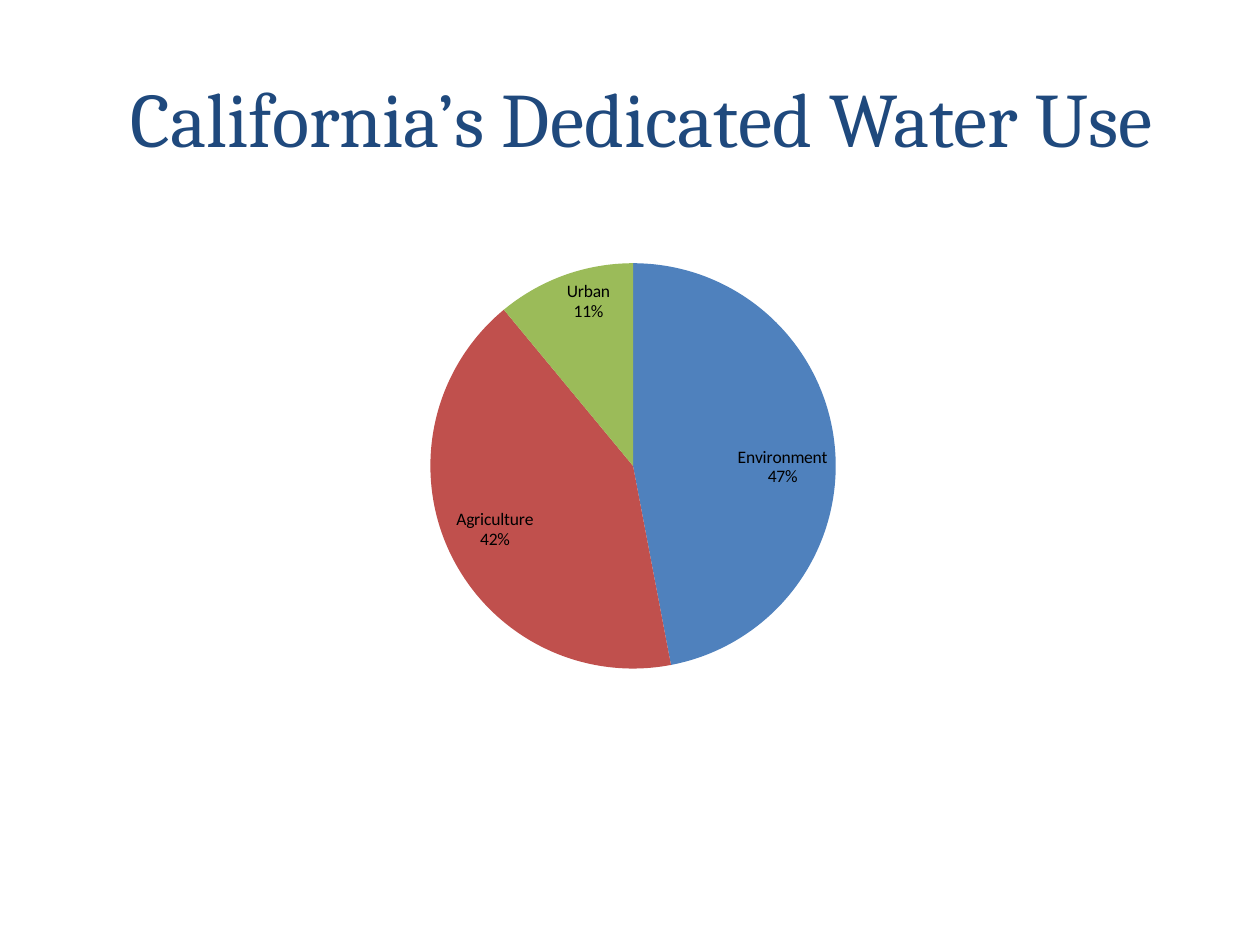
from dataclasses import dataclass

from pptx import Presentation
from pptx import util as u
from pptx.chart.data import CategoryChartData
from pptx.dml.color import RGBColor
from pptx.enum import chart as ch, text
from pptx.oxml import parse_xml
from pptx.oxml.ns import nsdecls, qn


@dataclass
class Theme:
    ink: str = "1F497D"
    label: str = "000000"
    fills: tuple = ("4F81BD", "C0504D", "9BBB59")
    head: str = "Cambria"
    body: str = "Calibri"
    big: int = 44
    small: int = 10


def put(obj, vals):
    for key, val in vals.items():
        setattr(obj, key, val)


class Deck:
    def __init__(self, theme):
        self.theme = theme
        self.prs = Presentation()
        put(self.prs, {"slide_width": u.Cm(25.4), "slide_height": u.Cm(19.05)})
        self.slide = self.prs.slides.add_slide(self.prs.slide_layouts[6])

    def font(self, font, name, size, color):
        put(font, {"name": name, "size": u.Pt(size)})
        font.color.rgb = RGBColor.from_string(color)

    def title(self, words, box):
        frame = self.slide.shapes.add_textbox(*map(u.Cm, box)).text_frame
        put(frame, {"word_wrap": True, "vertical_anchor": text.MSO_ANCHOR.MIDDLE})
        para = frame.paragraphs[0]
        put(para, {"text": words, "alignment": text.PP_ALIGN.CENTER})
        self.font(para.runs[0].font, self.theme.head, self.theme.big, self.theme.ink)

    def pie(self, shares, box, area):
        data = CategoryChartData(number_format="General")
        data.categories = list(shares)
        data.add_series("Series 1", list(shares.values()))
        kind = ch.XL_CHART_TYPE.PIE
        chart = self.slide.shapes.add_chart(kind, *map(u.Cm, box), data).chart
        put(chart, {"has_legend": False, "has_title": False})
        self.font(chart.font, self.theme.body, self.theme.small, self.theme.label)
        plot = chart.plots[0]
        put(plot, {"vary_by_categories": True, "has_data_labels": True})
        for i, color in enumerate(self.theme.fills):
            fill = plot.series[0].points[i].format.fill
            fill.solid()
            fill.fore_color.rgb = RGBColor.from_string(color)
        self.labels(plot.data_labels)
        self.layout(chart, area)

    def labels(self, labels):
        put(labels, {
            "show_category_name": True,
            "show_percentage": True,
            "show_value": False,
            "number_format": "0%",
            "number_format_is_linked": False,
            "position": ch.XL_LABEL_POSITION.INSIDE_END,
        })
        self.font(labels.font, self.theme.body, self.theme.small, self.theme.label)
        last = labels._element.find(qn("c:showBubbleSize"))
        if last is None:
            last = labels._element.find(qn("c:showPercent"))
        last.addnext(parse_xml(f"<c:separator {nsdecls('c')}>\n</c:separator>"))

    def layout(self, chart, area):
        zone = chart._chartSpace.find(".//" + qn("c:plotArea"))
        old = zone.find(qn("c:layout"))
        if old is not None:
            zone.remove(old)
        modes = '<c:xMode val="edge"/><c:yMode val="edge"/>'
        sides = "".join(f'<c:{k} val="{v}"/>' for k, v in zip("xywh", area))
        zone.insert(0, parse_xml(
            f"<c:layout {nsdecls('c')}><c:manualLayout>"
            f'<c:layoutTarget val="inner"/>{modes}{sides}'
            "</c:manualLayout></c:layout>"))


def main():
    deck = Deck(Theme())
    deck.title("California’s Dedicated Water Use", (1.7, 0.41, 22.48, 3.89))
    shares = {"Environment": 47, "Agriculture": 42, "Urban": 11}
    deck.pie(shares, (5.94, 4.14, 13.51, 9.73), (0.2, 0.12, 0.61, 0.84))
    deck.prs.save("out.pptx")


if __name__ == "__main__":
    main()
